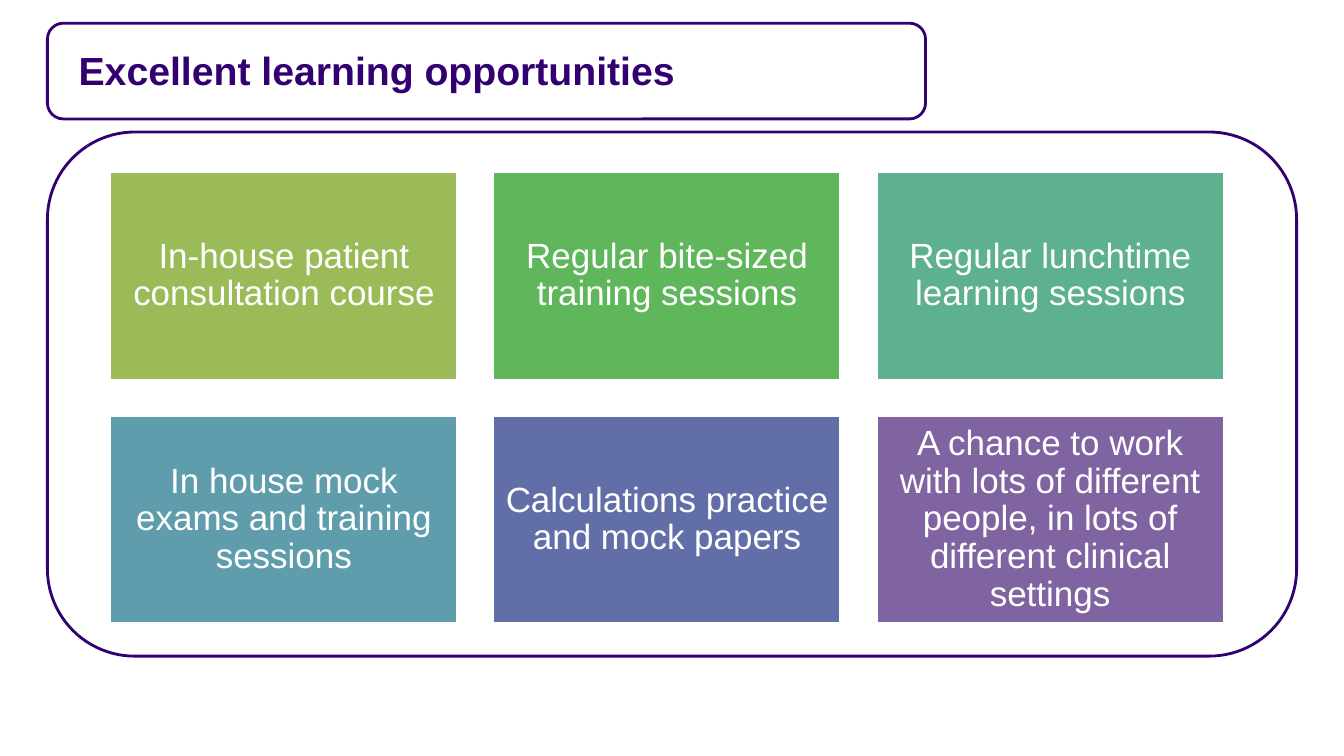
from pptx import Presentation
from pptx.dml.color import RGBColor
from pptx.enum.shapes import MSO_SHAPE
from pptx.enum.text import MSO_ANCHOR, MSO_AUTO_SIZE, PP_ALIGN
from pptx.util import Emu, Pt

RECT, ROUND_RECT = MSO_SHAPE.RECTANGLE, MSO_SHAPE.ROUNDED_RECTANGLE
MIDDLE = MSO_ANCHOR.MIDDLE
LEFT, CENTER = PP_ALIGN.LEFT, PP_ALIGN.CENTER
TITLE_ONLY = 5

PURPLE, WHITE = "330072", "FFFFFF"
FONT = "Arial"
CARDS = [
    ("In-house patient consultation course", "9BBB59"),
    ("Regular bite-sized training sessions", "5FB65B"),
    ("Regular lunchtime learning sessions", "5DB18E"),
    ("In house mock exams and training sessions", "5F9DAC"),
    ("Calculations practice and mock papers", "626EA7"),
    ("A chance to work with lots of different people, "
     "in lots of different clinical settings", "8064A2"),
]


def px(n):
    """Convert px to EMU, at 100 px to the inch."""
    return Emu(n * 9144)


def color(hex_string):
    return RGBColor.from_string(hex_string)


def add_box(slide, kind, box, fill, line):
    sp = slide.shapes.add_shape(kind, *map(px, box))
    sp.shadow.inherit = False
    sp.fill.solid()
    sp.fill.fore_color.rgb = color(fill)
    sp.line.color.rgb = color(line)
    sp.line.width = Pt(2)
    return sp


def write(sp, text, size, hex_string, align, bold=False, margins=(10, 10)):
    """Fill a shape with one paragraph; margins are (sides, top and bottom)."""
    tf = sp.text_frame
    tf.word_wrap = True
    tf.auto_size = MSO_AUTO_SIZE.NONE
    tf.vertical_anchor = MIDDLE
    tf.margin_left = tf.margin_right = px(margins[0])
    tf.margin_top = tf.margin_bottom = px(margins[1])
    p = tf.paragraphs[0]
    p.alignment = align
    r = p.add_run()
    r.text = text
    r.font.name = FONT
    r.font.size = Pt(size)
    r.font.bold = bold
    r.font.color.rgb = color(hex_string)
    return p


def add_header(slide, box, text):
    left, top, width, height = box
    add_box(slide, ROUND_RECT, box, WHITE, PURPLE)
    title = slide.shapes.title
    title.left, title.top = px(left + 21), px(top + 16)
    title.width, title.height = px(width - 42), px(height - 35)
    write(title, text, 28, PURPLE, LEFT, bold=True, margins=(10, 5))
    # The placeholder comes first on the slide, so bring it above its frame.
    slide.shapes._spTree.append(title._element)


def add_card_panel(slide, box, cards, columns=3):
    left, top, _, _ = box
    card_width, card_height, gap = 345, 207, 35
    add_box(slide, ROUND_RECT, box, WHITE, PURPLE)
    for i, (text, fill) in enumerate(cards):
        row, column = divmod(i, columns)
        x = left + 62 + column * (card_width + gap)
        y = top + 39 + row * (card_height + gap)
        sp = add_box(slide, RECT, (x, y, card_width, card_height), fill, WHITE)
        p = write(sp, text, 25, WHITE, CENTER)
        p.line_spacing = 0.9


def main():
    prs = Presentation()
    prs.slide_width, prs.slide_height = px(1333), px(750)
    slide = prs.slides.add_slide(prs.slide_layouts[TITLE_ONLY])
    add_card_panel(slide, (47, 131, 1239, 520), CARDS)
    add_header(slide, (47, 23, 871, 95), "Excellent learning opportunities")
    prs.save("out.pptx")


if __name__ == "__main__":
    main()
